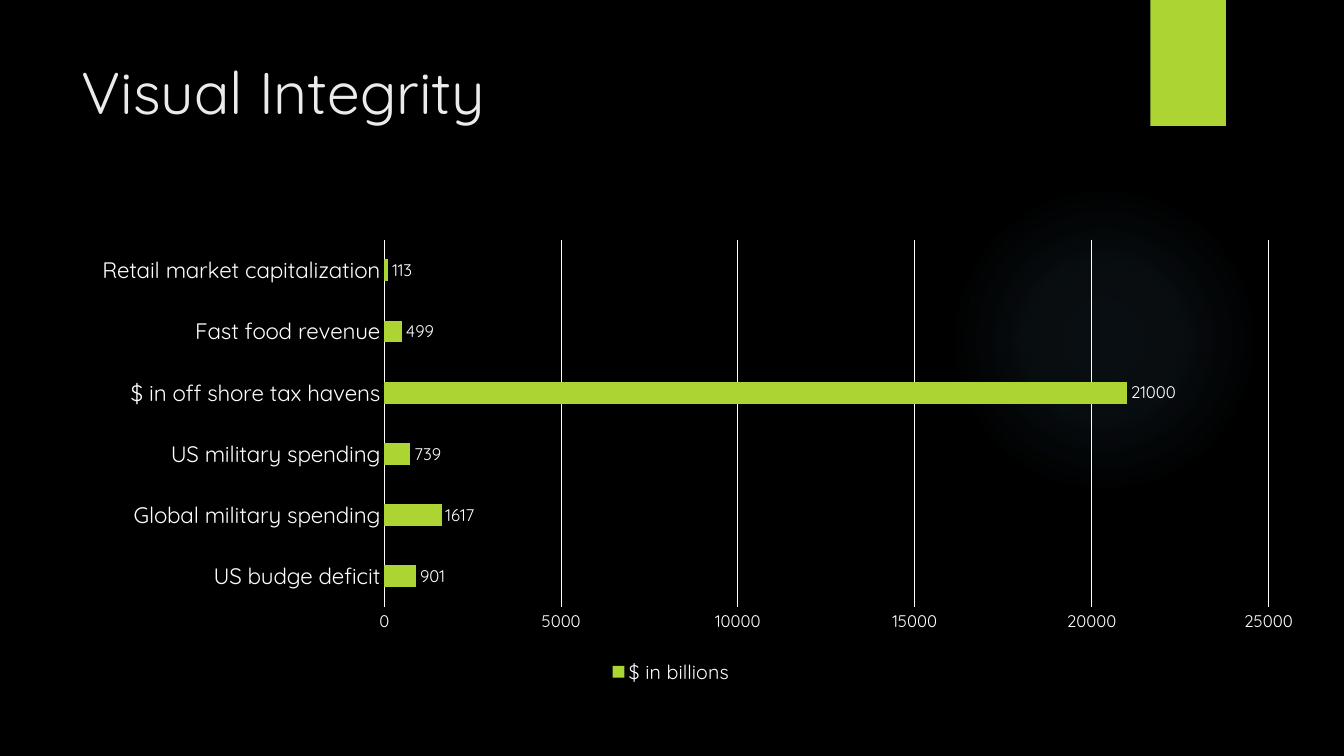
from lxml import etree
from pptx import Presentation
from pptx.chart import data
from pptx.dml.color import RGBColor
from pptx.enum import chart as ch, shapes, text
from pptx.oxml import parse_xml
from pptx.oxml.ns import nsdecls, qn
from pptx.util import Inches, Pt

BLACK = RGBColor(0x00, 0x00, 0x00)
WHITE = RGBColor(0xFF, 0xFF, 0xFF)
PALE = RGBColor(0xEB, 0xEB, 0xEB)
LIME = RGBColor(0xAC, 0xD4, 0x33)
BLUE = RGBColor(0x7A, 0xC4, 0xF0)
FACE = "Quicksand"

GLOW = [(0, 7), (36, 6), (69, 0)]  # position and opacity, in percent
PLOT = {"x": 0.276, "y": 0.03, "w": 0.691, "h": 0.794}
SPENDING = {
    "US budge deficit": 901,
    "Global military spending": 1617,
    "US military spending": 739,
    "$ in off shore tax havens": 21000,
    "Fast food revenue": 499,
    "Retail market capitalization": 113,
}


def style(font, size, color=WHITE):
    look = {"name": FACE, "size": Pt(size), "bold": False}
    for key, value in look.items():
        setattr(font, key, value)
    font.color.rgb = color


def shape(slide, kind, box):
    item = slide.shapes.add_shape(kind, *map(Inches, box))
    item.shadow.inherit = False
    item.line.fill.background()
    item.fill.solid()
    return item


def glow(slide, box):
    """Draw a disc that fades out from its centre."""
    disc = shape(slide, shapes.MSO_SHAPE.OVAL, box)
    stops = "".join(
        f'<a:gs pos="{pos * 1000}"><a:srgbClr val="{BLUE}">'
        f'<a:alpha val="{alpha * 1000}"/></a:srgbClr></a:gs>'
        for pos, alpha in GLOW
    )
    fade = parse_xml(
        f'<a:gradFill {nsdecls("a")}><a:gsLst>{stops}</a:gsLst>'
        '<a:path path="circle"><a:fillToRect l="50000" t="50000" '
        'r="50000" b="50000"/></a:path></a:gradFill>'
    )
    props = disc.element.spPr
    props.replace(props.find(qn("a:solidFill")), fade)


def tab(slide, box):
    shape(slide, shapes.MSO_SHAPE.RECTANGLE, box).fill.fore_color.rgb = LIME


def title(slide, box, words):
    frame = slide.shapes.add_textbox(*map(Inches, box)).text_frame
    frame.word_wrap = True
    frame.vertical_anchor = text.MSO_ANCHOR.TOP
    run = frame.paragraphs[0].add_run()
    run.text = words
    style(run.font, 42, PALE)


def place(chart):
    """Fix the inner plot area as shares of the chart."""
    area = chart.element.find(".//" + qn("c:plotArea"))
    for old in area.findall(qn("c:layout")):
        area.remove(old)
    layout = etree.Element(qn("c:layout"))
    manual = etree.SubElement(layout, qn("c:manualLayout"))
    rules = {"layoutTarget": "inner", "xMode": "edge", "yMode": "edge", **PLOT}
    for key, value in rules.items():
        etree.SubElement(manual, qn("c:" + key)).set("val", str(value))
    area.insert(0, layout)


def axes(chart):
    cat, val = chart.category_axis, chart.value_axis
    for axis, size in ((cat, 16), (val, 12)):
        axis.major_tick_mark = axis.minor_tick_mark = ch.XL_TICK_MARK.NONE
        style(axis.tick_labels.font, size)
    cat.has_major_gridlines = False
    val.has_major_gridlines = True
    for line in (cat.format.line, val.major_gridlines.format.line):
        line.color.rgb = WHITE
        line.width = Pt(0.75)
    val.format.line.fill.background()
    val.minimum_scale, val.maximum_scale, val.major_unit = 0, 25000, 5000


def bars(slide, box):
    facts = data.CategoryChartData(number_format="General")
    facts.categories = SPENDING.keys()
    facts.add_series("$ in billions", SPENDING.values())
    kind = ch.XL_CHART_TYPE.BAR_CLUSTERED
    chart = slide.shapes.add_chart(kind, *map(Inches, box), facts).chart
    chart.has_title = False
    style(chart.font, 10)
    place(chart)
    axes(chart)

    plot = chart.plots[0]
    plot.gap_width = 182
    plot.vary_by_categories = False
    fill = plot.series[0].format.fill
    fill.solid()
    fill.fore_color.rgb = LIME
    labels = plot.series[0].data_labels
    labels.show_value = True
    labels.position = ch.XL_LABEL_POSITION.OUTSIDE_END
    style(labels.font, 12)

    chart.has_legend = True
    chart.legend.position = ch.XL_LEGEND_POSITION.BOTTOM
    chart.legend.include_in_layout = False
    style(chart.legend.font, 14)


def main():
    deck = Presentation()
    deck.slide_width, deck.slide_height = Inches(13.33), Inches(7.5)
    slide = deck.slides.add_slide(deck.slide_layouts[6])
    slide.background.fill.solid()
    slide.background.fill.fore_color.rgb = BLACK
    glow(slide, (9.41, 1.83, 3.08, 3.08))
    tab(slide, (11.41, 0, 0.75, 1.25))
    bars(slide, (0.31, 2.24, 12.69, 4.59))
    title(slide, (0.71, 0.5, 10.29, 1.53), "Visual Integrity")
    deck.save("out.pptx")


if __name__ == "__main__":
    main()
